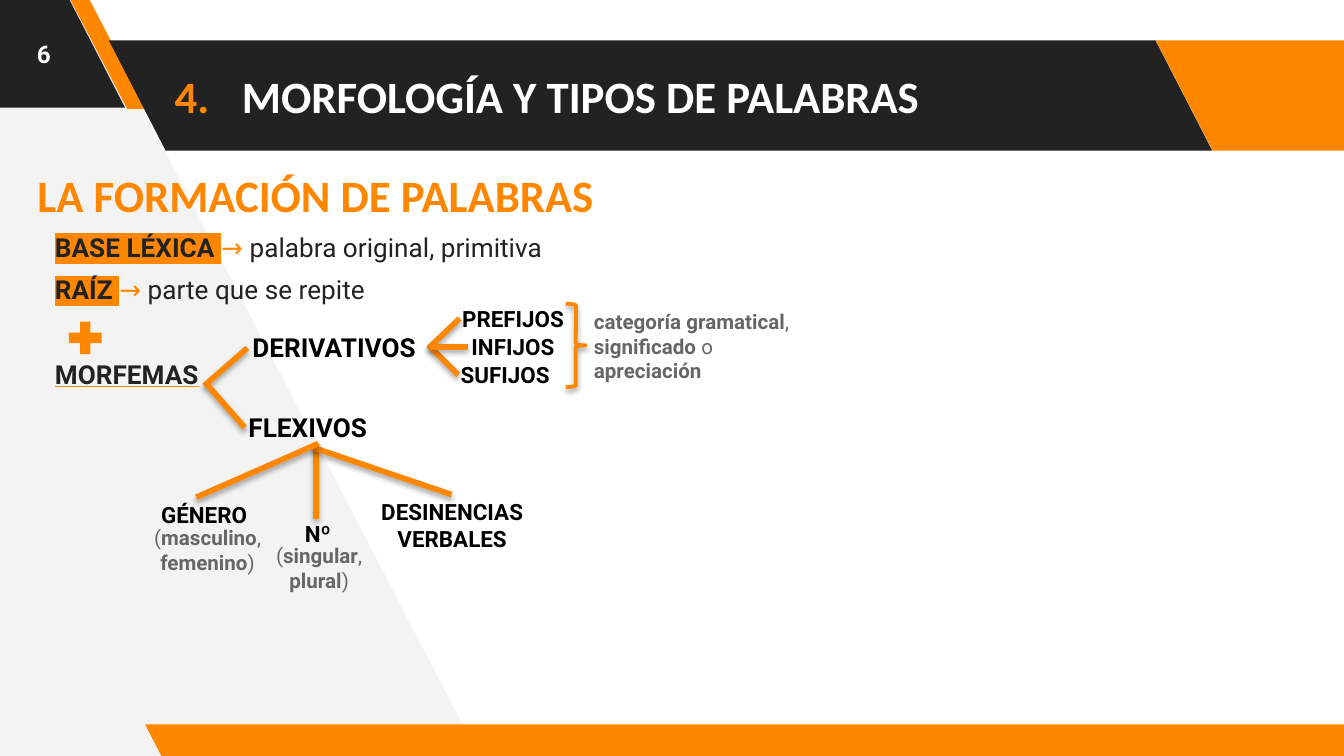
from typing import NamedTuple

from lxml.etree import SubElement
from pptx import Presentation
from pptx.dml.color import RGBColor
from pptx.enum.shapes import MSO_CONNECTOR as Connector, MSO_SHAPE as Preset
from pptx.enum.text import MSO_ANCHOR as Anchor, MSO_AUTO_SIZE as AutoSize, PP_ALIGN as Align
from pptx.oxml.ns import qn
from pptx.util import Inches, Pt

COLORS = {"orange": "FF8700", "dark": "222222", "pale": "F3F3F3",
          "gray": "666666", "black": "000000", "white": "FFFFFF"}
COLUMN = Inches(0.1)  # grid of 100 columns; rows are as tall as columns are wide
COLUMNS, ROWS = 100, 56.25
BOLD = {"bold": True}
LABEL = {"size": 12, "bold": True, "wrap": False, "grow": True}
NOTE = {"size": 11, "color": "gray", "grow": True}


class Box(NamedTuple):
    left: float
    top: float
    width: float
    height: float

    def point(self, column, row):
        return round((self.left + column) * COLUMN), round((self.top + row) * COLUMN)

    def area(self, column, row, width, height):
        return *self.point(column, row), round(width * COLUMN), round(height * COLUMN)


def rgb(name):
    return RGBColor.from_string(COLORS[name])


def add_color(parent, tag, name):
    SubElement(SubElement(parent, qn(tag)), qn("a:srgbClr"), val=COLORS[name])


def add_shadow(shape, opacity=35, distance=1.8):
    effects = SubElement(shape._element.spPr, qn("a:effectLst"))
    shadow = SubElement(effects, qn("a:outerShdw"), blurRad=str(Pt(3.1)),
                        dist=str(Pt(distance)), dir="5400000", rotWithShape="0")
    color = SubElement(shadow, qn("a:srgbClr"), val=COLORS["black"])
    SubElement(color, qn("a:alpha"), val=str(opacity * 1000))


def add_run(paragraph, text, size, color, font, bold=False, highlight=None, underline=None):
    for index, line in enumerate(text.split("\n")):
        if index:
            paragraph.add_line_break()
        if not line:
            continue
        run = paragraph.add_run()
        run.text = line
        run.font.size, run.font.bold = Pt(size), bold
        run.font.color.rgb = rgb(color)
        properties = run._r.get_or_add_rPr()
        if highlight:
            add_color(properties, "a:highlight", highlight)
        if underline:
            run.font.underline = True
            add_color(SubElement(properties, qn("a:uFill")), "a:solidFill", underline)
        run.font.name = font


def write(shape, paragraphs, size=14, color="black", font="Roboto", bold=False, align=Align.LEFT,
          anchor=Anchor.TOP, wrap=True, grow=False, margin=0.05, before=()):
    """Each paragraph is a string or a list of (text, run format) pairs."""
    frame = shape.text_frame
    frame.word_wrap, frame.vertical_anchor = wrap, anchor
    frame.auto_size = AutoSize.SHAPE_TO_FIT_TEXT if grow else AutoSize.NONE
    frame.margin_left = frame.margin_right = Inches(0.1)
    frame.margin_top = frame.margin_bottom = Inches(margin)
    for index, runs in enumerate(paragraphs):
        paragraph = frame.add_paragraph() if index else frame.paragraphs[0]
        paragraph.alignment = align
        if before:
            paragraph.space_before = Pt(before[index])
        for text, own in [(runs, {})] if isinstance(runs, str) else runs:
            add_run(paragraph, text, **{"size": size, "color": color, "font": font,
                                        "bold": bold, **own})
    return frame


def add_text(slide, place, *paragraphs, **style):
    return write(slide.shapes.add_textbox(*place), paragraphs, **style)


def add_filled(slide, preset, place, color, slant=None):
    shape = slide.shapes.add_shape(preset, *place)
    shape.shadow.inherit = False
    shape.fill.solid()
    shape.fill.fore_color.rgb = rgb(color)
    shape.line.fill.background()
    if slant:
        shape.adjustments[0] = slant
        shape._element.spPr.find(qn("a:xfrm")).set("flipH", "1")


def add_branch(slide, start, end):
    branch = slide.shapes.add_connector(Connector.STRAIGHT, *start, *end)
    branch.line.color.rgb, branch.line.width = rgb("orange"), Pt(3)
    add_shadow(branch)


def draw_backdrop(slide, box):
    corners = [box.point(*corner) for corner in ((35.6, 56.2), (6.2, -0.4), (-0.6, -0.4), (-0.2, 56.6))]
    builder = slide.shapes.build_freeform(*corners[0])
    builder.add_line_segments(corners[1:], close=True)
    panel = builder.convert_to_shape()
    panel.shadow.inherit = False
    panel.fill.solid()
    panel.fill.fore_color.rgb = rgb("pale")
    panel.line.fill.background()
    for place, color, slant in (((-9.9, -0.2, 19.2, 8.2), "dark", 0.515),
                                ((5.2, -0.1, 5.7, 8.2), "orange", 0.75),
                                ((8.1, 3, 82.1, 8.2), "dark", 0.515),
                                ((86, 3, 19.2, 8.2), "orange", 0.515),
                                ((10.8, 53.9, 91.5, 2.5), "orange", 0.515)):
        add_filled(slide, Preset.PARALLELOGRAM, box.area(*place), color, slant)


def draw_header(slide, box):
    title = slide.shapes.title
    slide.shapes._spTree.append(title._element)  # bring in front of the backdrop
    title.left, title.top, title.width, title.height = box.area(12, 3, 82.8, 8.2)
    heading = {"size": 24, "font": "Calibri", "bold": True, "anchor": Anchor.MIDDLE, "margin": 0.1}
    frame = write(title, ["MORFOLOGÍA Y TIPOS DE PALABRAS"], color="white", **heading)
    properties = frame.paragraphs[0]._p.get_or_add_pPr()
    properties.set("marL", str(Inches(0.5)))
    properties.set("indent", str(-Inches(0.5)))
    add_color(properties, "a:buClr", "orange")
    SubElement(properties, qn("a:buAutoNum"), type="arabicPeriod", startAt="4")
    add_text(slide, box.area(0, 0, 6.5, 8), "6", size=13, color="white", bold=True,
             align=Align.CENTER, anchor=Anchor.MIDDLE)
    add_text(slide, box.area(1.8, 11.2, 82.8, 6.5), "LA FORMACIÓN DE PALABRAS",
             color="orange", **heading)


def draw_terms(slide, box):
    marked = {"bold": True, "highlight": "orange"}
    arrow = ("→", {"color": "orange"})
    add_text(slide, box.area(0, 0, box.width, box.height),
             [("BASE LÉXICA ", marked), arrow, (" palabra original, primitiva", {})],
             [("RAÍZ ", marked), arrow, (" parte que se repite", {})],
             [("MORFEMAS", {"bold": True, "underline": "orange"})],
             color="dark", margin=0.1, before=(6, 6, 28.4))
    add_filled(slide, Preset.MATH_PLUS, box.area(1.6, 7.3, 3.3, 3.3), "orange")
    add_branch(slide, box.point(12.1, 12.5), box.point(15.3, 9.7))
    add_branch(slide, box.point(12.3, 12.4), box.point(15.1, 15.6))


def draw_derivatives(slide, box):
    add_text(slide, box.area(0, 2, 14.4, 3.4), "DERIVATIVOS", **{**LABEL, "size": 14})
    for start, end in (((14.1, 3.7), (16.4, 1.5)), ((14.1, 3.5), (16.3, 5.7)),
                       ((14.2, 3.6), (17, 3.6))):
        add_branch(slide, box.point(*start), box.point(*end))
    affixes = (("PREFIJOS", 15.6, 9.7), ("INFIJOS", 16.3, 8.3), ("SUFIJOS", 15.5, 8.7))
    for row, (affix, left, width) in enumerate(affixes):
        add_text(slide, box.area(left, 2.1 * row, width, 3), affix, **LABEL)
    brace = slide.shapes.add_shape(Preset.RIGHT_BRACE, *box.area(24.3, 0.4, 1.5, 6.2))
    brace.fill.background()
    brace.line.color.rgb, brace.line.width = rgb("orange"), Pt(2)
    add_shadow(brace, opacity=38, distance=1.6)
    add_text(slide, box.area(25.4, 0.3, 17.9, 6.6),
             [("categoría gramatical", BOLD), (", ", {}), ("significado", BOLD), (" o ", {}),
              ("apreciación", BOLD)], **NOTE)


def draw_inflections(slide, box):
    add_text(slide, box.area(7.4, 0, 10.9, 3.4), "FLEXIVOS", **{**LABEL, "size": 14})
    for start, end in (((13.4, 2.9), (13.4, 8.5)), ((13.2, 3.2), (23.5, 6.7)),
                       ((13.6, 2.9), (4.5, 6.9))):
        add_branch(slide, box.point(*start), box.point(*end))
    for label, place in (("GÉNERO", (0.9, 6.7, 8.5, 3)), ("Nº", (11.6, 8.1, 4, 3))):
        add_text(slide, box.area(*place), label, **LABEL)
    add_text(slide, box.area(17.2, 6.5, 12.7, 5), "DESINENCIAS", "VERBALES",
             align=Align.CENTER, **LABEL)
    for first, second, left, top in (("masculino", "femenino", 0, 8.5),
                                     ("singular", "plural", 8.3, 9.8)):
        add_text(slide, box.area(left, top, 10.7, 4.7),
                 [("(", {}), (first, BOLD), (",\n", {}), (second, BOLD), (")", {})],
                 align=Align.CENTER, **NOTE)


def main():
    presentation = Presentation()
    presentation.slide_width = COLUMNS * COLUMN
    presentation.slide_height = round(ROWS * COLUMN)
    slide = presentation.slides.add_slide(presentation.slide_layouts[5])
    whole = Box(0, 0, COLUMNS, ROWS)
    draw_backdrop(slide, whole)
    draw_header(slide, whole)
    draw_terms(slide, Box(3.1, 16.2, 46.9, 19.6))
    draw_derivatives(slide, Box(17.8, 22.2, 43.3, 6.9))
    draw_inflections(slide, Box(10.1, 30.1, 29.9, 14.5))
    presentation.save("out.pptx")


if __name__ == "__main__":
    main()
